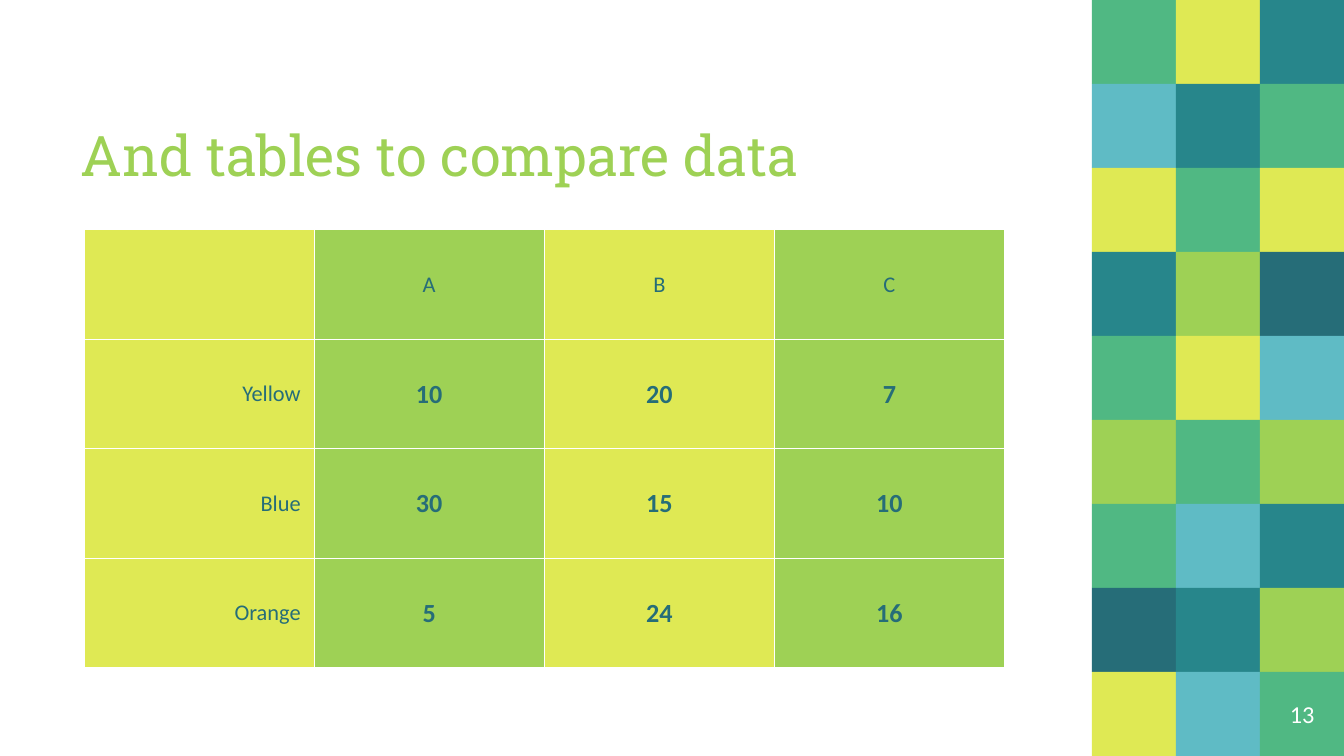
"""Build a slide with a comparison table beside a mosaic of coloured tiles."""
from dataclasses import dataclass

from lxml import etree
from pptx import Presentation
from pptx.dml.color import RGBColor
from pptx.enum.shapes import MSO_SHAPE
from pptx.enum.text import MSO_ANCHOR, MSO_AUTO_SIZE, PP_ALIGN
from pptx.oxml.ns import qn
from pptx.util import Inches, Pt

RECTANGLE = MSO_SHAPE.RECTANGLE
MIDDLE, BOTTOM = MSO_ANCHOR.MIDDLE, MSO_ANCHOR.BOTTOM
LEFT, CENTER, RIGHT = PP_ALIGN.LEFT, PP_ALIGN.CENTER, PP_ALIGN.RIGHT
NO_AUTOFIT = MSO_AUTO_SIZE.NONE


@dataclass(frozen=True)
class Theme:
    lime: str = "9ED155"
    yellow: str = "DFE954"
    green: str = "50B883"
    teal: str = "27868B"
    blue: str = "5FBBC5"
    dark: str = "266D78"
    white: str = "FFFFFF"
    title_font: str = "Roboto Slab"
    body_font: str = "Calibri"
    title_size: float = 30
    value_size: float = 14
    number_size: float = 13
    label_size: float = 12
    border_width: float = 0.75


theme = Theme()


def style_text(text_frame, font_name, size, color, alignment, bold=False):
    paragraph = text_frame.paragraphs[0]
    paragraph.alignment = alignment
    paragraph.font.name = font_name
    paragraph.font.size = Pt(size)
    paragraph.font.bold = bold
    paragraph.font.color.rgb = RGBColor.from_string(color)


def add_borders(cell, color, width):
    properties = cell._tc.get_or_add_tcPr()
    for position, side in enumerate(("lnL", "lnR", "lnT", "lnB")):
        line = etree.Element(qn(f"a:{side}"), w=str(Pt(width)))
        fill = etree.SubElement(line, qn("a:solidFill"))
        etree.SubElement(fill, qn("a:srgbClr"), val=color)
        properties.insert(position, line)


presentation = Presentation()
presentation.slide_width = Inches(10)
presentation.slide_height = Inches(5.625)
tile = presentation.slide_width // 16
slide = presentation.slides.add_slide(presentation.slide_layouts[5])

mosaic_colors = {
    "L": theme.lime, "Y": theme.yellow, "G": theme.green,
    "T": theme.teal, "B": theme.blue, "D": theme.dark,
}
mosaic = ("GYT", "BTG", "YGY", "TLD", "GYB", "LGL", "GBT", "DTL", "YBG")
mosaic_column = 13
for row, codes in enumerate(mosaic):
    for column, code in enumerate(codes, start=mosaic_column):
        square = slide.shapes.add_shape(
            RECTANGLE, column * tile, row * tile, tile, tile)
        square.shadow.inherit = False
        square.fill.solid()
        square.fill.fore_color.rgb = RGBColor.from_string(mosaic_colors[code])
        square.line.fill.background()

title = slide.shapes.title
title.left, title.top = Inches(0.5), Inches(0.56)
title.width, title.height = Inches(7.01), Inches(0.94)
title_frame = title.text_frame
title_frame.text = "And tables to compare data"
title_frame.auto_size = NO_AUTOFIT
title_frame.vertical_anchor = BOTTOM
title_frame.margin_top = title_frame.margin_bottom = Inches(0.1)
style_text(title_frame, theme.title_font, theme.title_size, theme.lime, LEFT)

table_rows = (
    ("", "A", "B", "C"),
    ("Yellow", "10", "20", "7"),
    ("Blue", "30", "15", "10"),
    ("Orange", "5", "24", "16"),
)
table = slide.shapes.add_table(
    len(table_rows), len(table_rows[0]),
    tile, Inches(1.71), Inches(6.85), Inches(3.26)).table
for row, texts in enumerate(table_rows):
    for column, text in enumerate(texts):
        cell = table.cell(row, column)
        cell.text = text
        cell.vertical_anchor = MIDDLE
        cell.margin_top = cell.margin_bottom = Inches(0.07)
        cell.fill.solid()
        cell.fill.fore_color.rgb = RGBColor.from_string(
            theme.lime if column % 2 else theme.yellow)
        is_value = row > 0 and column > 0
        style_text(
            cell.text_frame, theme.body_font,
            theme.value_size if is_value else theme.label_size, theme.dark,
            CENTER if column else RIGHT, is_value)
        add_borders(cell, theme.white, theme.border_width)

slide_number = slide.shapes.add_textbox(15 * tile, 8 * tile, tile, tile)
number_frame = slide_number.text_frame
number_frame.text = "13"
number_frame.word_wrap = True
number_frame.vertical_anchor = MIDDLE
number_frame.margin_top = number_frame.margin_bottom = Inches(0.1)
style_text(number_frame, theme.body_font, theme.number_size, theme.white, CENTER)

presentation.save("out.pptx")
